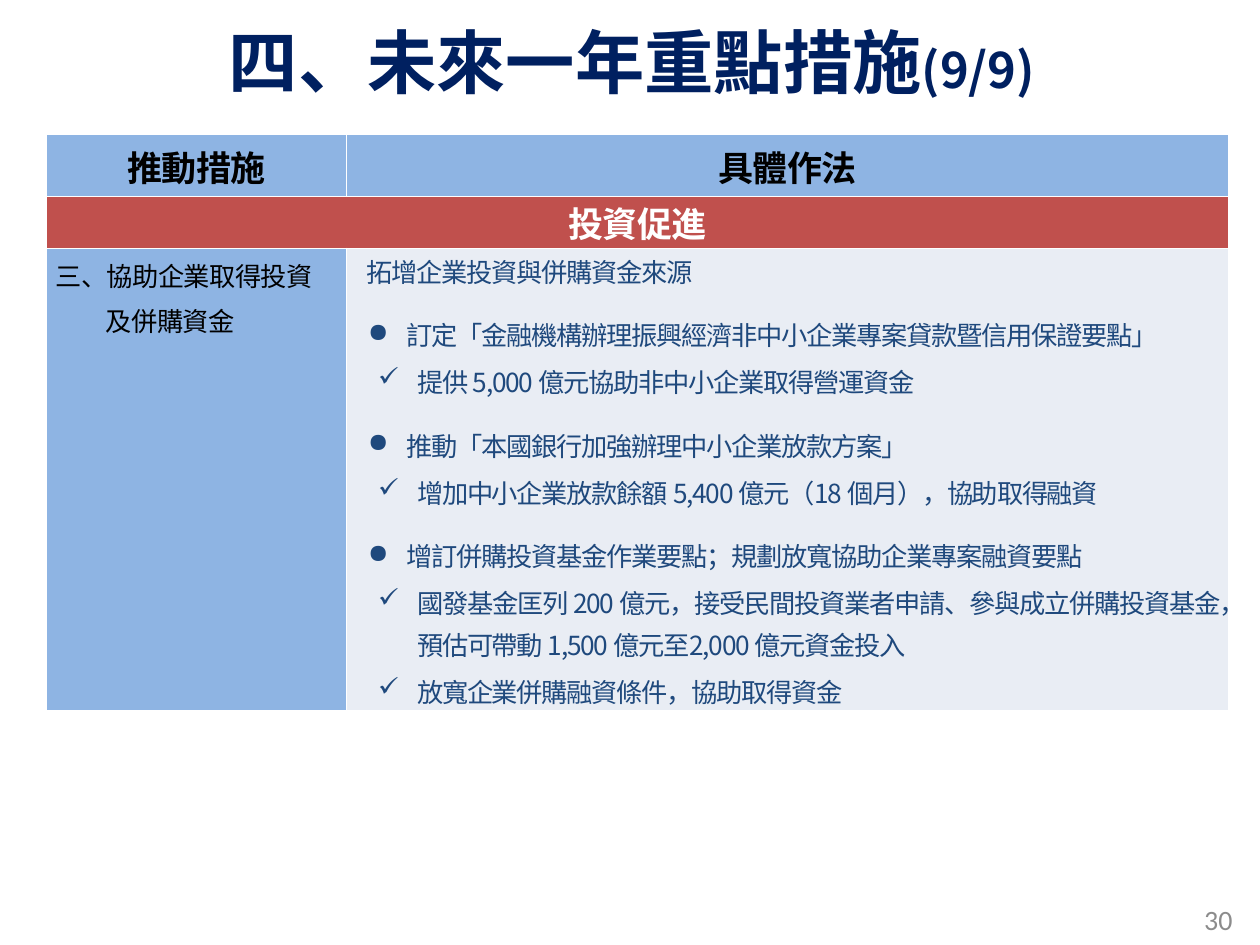
from dataclasses import dataclass
from lxml.etree import Element, SubElement
from pptx import Presentation
from pptx.dml.color import RGBColor
from pptx.enum.text import MSO_ANCHOR, MSO_AUTO_SIZE, PP_ALIGN
from pptx.oxml.ns import qn
from pptx.util import Inches, Pt

COLORS = {
    "navy": "002060", "blue": "1F497D", "sky": "8EB4E3", "red": "C0504D",
    "pale": "E9EDF4", "black": "000000", "white": "FFFFFF", "gray": "8C8C8C",
}
CJK = "Noto Sans CJK SC"


@dataclass
class Style:
    size: float
    color: str
    bold: bool = False
    track: float = 0
    face: str = CJK


@dataclass
class Para:
    text: str
    style: Style
    align: PP_ALIGN = PP_ALIGN.LEFT
    left: float = 0
    hang: float = 0
    line: object = None
    before: float = 0
    after: float = 0
    mark: str = ""


def paint(run, style: Style) -> None:
    font = run.font
    font.size = Pt(style.size)
    font.bold = style.bold
    font.name = style.face
    font.color.rgb = RGBColor.from_string(COLORS[style.color])
    props = run._r.get_or_add_rPr()
    if style.track:
        props.set("spc", str(round(style.track * 100)))
    asian = Element(qn("a:ea"), typeface=style.face)
    props.find(qn("a:latin")).addnext(asian)


def write(par, item: Para) -> None:
    par.text = item.text
    par.alignment = item.align
    par.space_before = Pt(item.before)
    par.space_after = Pt(item.after)
    if item.line:
        par.line_spacing = item.line
    props = par._p.get_or_add_pPr()
    props.set("marL", str(Inches(item.left)))
    props.set("indent", str(Inches(-item.hang)))
    if item.mark:
        SubElement(props, qn("a:buChar"), char=item.mark)
    else:
        SubElement(props, qn("a:buNone"))
    for run in par.runs:
        paint(run, item.style)


def edge(cell) -> None:
    props = cell._tc.get_or_add_tcPr()
    for spot, side in enumerate(("lnL", "lnR", "lnT", "lnB")):
        line = Element(qn(f"a:{side}"), w=str(Pt(0.75)))
        fill = SubElement(line, qn("a:solidFill"))
        SubElement(fill, qn("a:srgbClr"), val=COLORS["white"])
        props.insert(spot, line)


def fill_cell(cell, color: str, items: list[Para], anchor=MSO_ANCHOR.TOP) -> None:
    cell.fill.solid()
    cell.fill.fore_color.rgb = RGBColor.from_string(COLORS[color])
    cell.margin_left = cell.margin_right = Inches(0.07)
    cell.margin_top = cell.margin_bottom = 0
    cell.vertical_anchor = anchor
    frame = cell.text_frame
    for spot, item in enumerate(items):
        write(frame.paragraphs[0] if spot == 0 else frame.add_paragraph(), item)


BODY = Style(15, "blue", track=-0.7)


def topic(text: str) -> Para:
    return Para(text, BODY, left=0.41, hang=0.31, line=Pt(24), before=6, mark="●")


def check(text: str, after: float = 6) -> Para:
    return Para(text, BODY, PP_ALIGN.JUSTIFY, 0.49, 0.31, Pt(24), 3, after, "✓")


def head(text: str, color: str) -> Para:
    return Para(text, Style(20, color, True, -0.3), PP_ALIGN.CENTER)


STEPS = [
    Para("拓增企業投資與併購資金來源", BODY, left=0.09, line=Pt(24), before=6, after=6),
    topic("訂定「金融機構辦理振興經濟非中小企業專案貸款暨信用保證要點」"),
    check("提供 5,000 億元協助非中小企業取得營運資金"),
    topic("推動「本國銀行加強辦理中小企業放款方案」"),
    check("增加中小企業放款餘額 5,400 億元（18 個月），協助取得融資"),
    topic("增訂併購投資基金作業要點；規劃放寬協助企業專案融資要點"),
    check("國發基金匡列 200 億元，接受民間投資業者申請、參與成立併購投資基金，"
          "預估可帶動 1,500 億元至2,000 億元資金投入", 0),
    check("放寬企業併購融資條件，協助取得資金"),
]
GOAL = Para("三、協助企業取得投資及併購資金", Style(15, "black", track=-0.3),
            left=0.4, hang=0.4, line=1.2, before=6)


def add_title(slide) -> None:
    title = slide.shapes.title
    title.left, title.top = 0, Inches(0.13)
    title.width, title.height = Inches(10.03), Inches(0.7)
    frame = title.text_frame
    frame.auto_size = MSO_AUTO_SIZE.NONE
    frame.margin_left = frame.margin_right = 0
    frame.vertical_anchor = MSO_ANCHOR.MIDDLE
    par = frame.paragraphs[0]
    write(par, Para("四、未來一年重點措施", Style(39.6, "navy", True), PP_ALIGN.CENTER))
    count = par.add_run()
    count.text = "(9/9)"
    paint(count, Style(27.9, "navy", True))


def add_grid(slide) -> None:
    grid = slide.shapes.add_table(
        3, 2, Inches(0.37), Inches(1.07), Inches(9.38), Inches(4.56)).table
    grid.horz_banding = False
    for col, width in zip(grid.columns, (2.38, 7)):
        col.width = Inches(width)
    for row, height in zip(grid.rows, (0.49, 0.41, 3.66)):
        row.height = Inches(height)
    for cell in grid.iter_cells():
        edge(cell)
    for col, text in enumerate(("推動措施", "具體作法")):
        fill_cell(grid.cell(0, col), "sky", [head(text, "black")], MSO_ANCHOR.MIDDLE)
    grid.cell(1, 0).merge(grid.cell(1, 1))
    fill_cell(grid.cell(1, 0), "red", [head("投資促進", "white")])
    fill_cell(grid.cell(2, 0), "sky", [GOAL])
    fill_cell(grid.cell(2, 1), "pale", STEPS)


def add_page(slide) -> None:
    box = slide.shapes.add_textbox(Inches(7.55), Inches(7.1), Inches(2.33), Inches(0.4))
    frame = box.text_frame
    frame.word_wrap = True
    frame.vertical_anchor = MSO_ANCHOR.MIDDLE
    write(frame.paragraphs[0],
          Para("30", Style(16, "gray", face="Calibri"), PP_ALIGN.RIGHT))


def main() -> None:
    deck = Presentation()
    deck.slide_width, deck.slide_height = Inches(10), Inches(7.5)
    slide = deck.slides.add_slide(deck.slide_layouts[5])
    add_title(slide)
    add_grid(slide)
    add_page(slide)
    deck.save("out.pptx")


if __name__ == "__main__":
    main()
